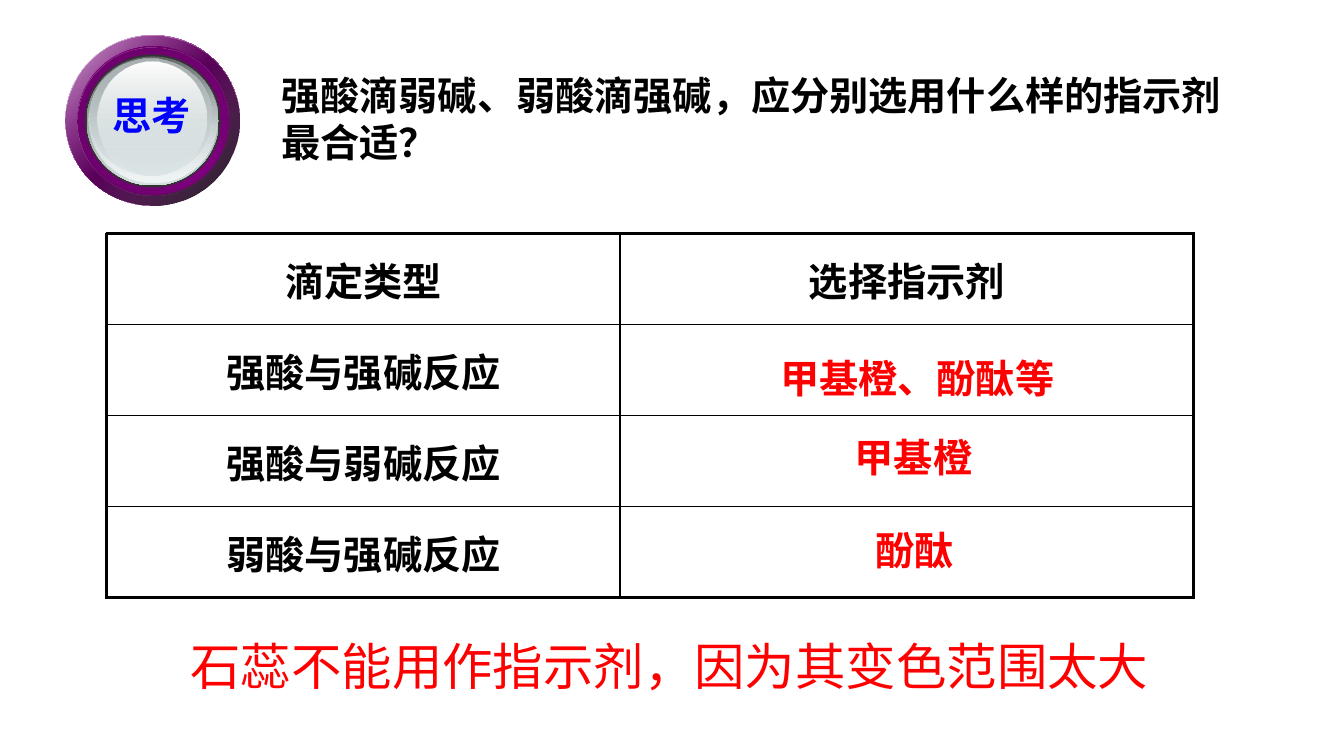
"""Build a slide on choosing indicators for acid-base titration."""
from lxml import etree
from pptx import Presentation
from pptx.dml.color import RGBColor
from pptx.enum.shapes import MSO_SHAPE
from pptx.enum.text import MSO_ANCHOR, MSO_AUTO_SIZE, PP_ALIGN
from pptx.oxml import parse_xml
from pptx.oxml.ns import qn
from pptx.util import Emu, Pt

OVAL = MSO_SHAPE.OVAL
TOP, MIDDLE = MSO_ANCHOR.TOP, MSO_ANCHOR.MIDDLE
FIXED = MSO_AUTO_SIZE.NONE
LEFT, CENTER = PP_ALIGN.LEFT, PP_ALIGN.CENTER
SCALE = 9144
NS = "http://schemas.openxmlformats.org/drawingml/2006/main"
SERIF, SANS, CJK = "Times New Roman", "Arial", "Noto Sans CJK SC"
BLACK, RED, BLUE = "000000", "FF0000", "0000FF"

TYPES = ["滴定类型", "强酸与强碱反应", "强酸与弱碱反应", "弱酸与强碱反应"]
ANSWERS = [
    ("甲基橙、酚酞等", (764, 347, 315, 57)),
    ("甲基橙", (838, 425, 151, 57)),
    ("酚酞", (858, 517, 111, 57)),
]
RINGS = [
    ((65, 35, 173, 169), 45,
     [(0, "FFFFFF", 100), (50, "800080", 100), (100, "FFFFFF", 100)]),
    ((65, 35, 173, 169), 45, [(0, "800080", 32), (100, "000000", 90)]),
    ((77, 46, 150, 147), 315,
     [(0, "620062", 100), (50, "800080", 100), (100, "620062", 100)]),
    ((77, 47, 150, 147), 45, [(0, "690069", 100), (100, "800080", 0)]),
    ((84, 54, 135, 132), 0, [(0, "333333", 100), (100, "333333", 100)]),
    ((86, 56, 131, 128), 90, [(0, "636869", 100), (100, "D6E1E2", 100)]),
    ((88, 56, 128, 125), 90, [(0, "D6E1E2", 0), (100, "F1F5F5", 100)]),
    ((89, 58, 121, 116), 90, [(0, "AAB2B3", 100), (100, "D6E1E2", 48)]),
    ((97, 61, 108, 113), 90, [(0, "FFFFFF", 100), (100, "D6E1E2", 38)]),
]


def px(*vals):
    """Turn px lengths into EMU."""
    return [Emu(val * SCALE) for val in vals]


def color(code):
    """Turn a hex string into a colour."""
    return RGBColor.from_string(code)


def write(frame, text, face, size, tint, bold=True, align=LEFT):
    """Put one styled paragraph into a text frame."""
    frame.word_wrap = True
    para = frame.paragraphs[0]
    para.text = text
    para.alignment = align
    font = para.font
    font.name, font.size, font.bold = face, Pt(size), bold
    font.color.rgb = color(tint)
    props = para._p.pPr.find(qn("a:defRPr"))
    etree.SubElement(props, qn("a:ea")).set("typeface", CJK)


def label(shapes, text, box, face, size, tint, bold=True, align=LEFT):
    """Add a text box."""
    shape = shapes.add_textbox(*px(*box))
    write(shape.text_frame, text, face, size, tint, bold, align)


def blend(shape, angle, stops):
    """Fill a shape with a linear gradient of position, colour, opacity."""
    parts = "".join(
        f'<a:gs pos="{pos * 1000}"><a:srgbClr val="{code}">'
        f'<a:alpha val="{alpha * 1000}"/></a:srgbClr></a:gs>'
        for pos, code, alpha in stops)
    shape.fill.background()
    props = shape._element.spPr
    props.replace(props.find(qn("a:noFill")), parse_xml(
        f'<a:gradFill xmlns:a="{NS}" rotWithShape="1"><a:gsLst>{parts}'
        f'</a:gsLst><a:lin ang="{angle * 60000}" scaled="1"/></a:gradFill>'))


def badge(slide):
    """Add the round button."""
    shapes = slide.shapes.add_group_shape().shapes
    for box, angle, stops in RINGS:
        ring = shapes.add_shape(OVAL, *px(*box))
        ring.shadow.inherit = False
        ring.line.fill.background()
        blend(ring, angle, stops)
    label(shapes, "思考", (96, 86, 108, 57), CJK, 28, BLUE, align=CENTER)


def edge(cell, side, width):
    """Draw one black border of a cell."""
    cell._tc.get_or_add_tcPr().append(parse_xml(
        f'<a:ln{side} xmlns:a="{NS}" w="{Pt(width)}"><a:solidFill>'
        f'<a:srgbClr val="{BLACK}"/></a:solidFill></a:ln{side}>'))


def grid(slide):
    """Add the table of titration types."""
    rows, cols = len(TYPES), 2
    table = slide.shapes.add_table(
        rows, cols, *px(106, 232, 1078, 361)).table
    table.first_row = table.horz_banding = False
    for col, width in zip(table.columns, px(509, 569)):
        col.width = width
    for r in range(rows):
        for c in range(cols):
            cell = table.cell(r, c)
            outer = {"L": c == 0, "R": c == cols - 1,
                     "T": r == 0, "B": r == rows - 1}
            for side, thick in outer.items():
                edge(cell, side, 2.25 if thick else 1)
            cell.fill.background()
            cell.vertical_anchor = MIDDLE
            cell.margin_left, cell.margin_right = px(13, 13)
            text = TYPES[r] if c == 0 else "选择指示剂" if r == 0 else ""
            if text:
                write(cell.text_frame, text, SANS, 28, BLACK, align=CENTER)


def ask(slide):
    """Set the question as the title."""
    title = slide.shapes.title
    title.left, title.top, title.width, title.height = px(269, 66, 960, 104)
    frame = title.text_frame
    write(frame, "强酸滴弱碱、弱酸滴强碱，应分别选用什么样的指示剂最合适？",
          SERIF, 28, BLACK)
    frame.auto_size, frame.vertical_anchor = FIXED, TOP


def main():
    """Build and save the slide."""
    deck = Presentation()
    deck.slide_width, deck.slide_height = px(1333, 750)
    slide = deck.slides.add_slide(deck.slide_layouts[5])
    ask(slide)
    badge(slide)
    grid(slide)
    for text, box in ANSWERS:
        label(slide.shapes, text, box, SERIF, 28, RED)
    label(slide.shapes, "石蕊不能用作指示剂，因为其变色范围太大",
          (179, 625, 1001, 71), CJK, 36, RED, bold=False)
    deck.save("out.pptx")


if __name__ == "__main__":
    main()
